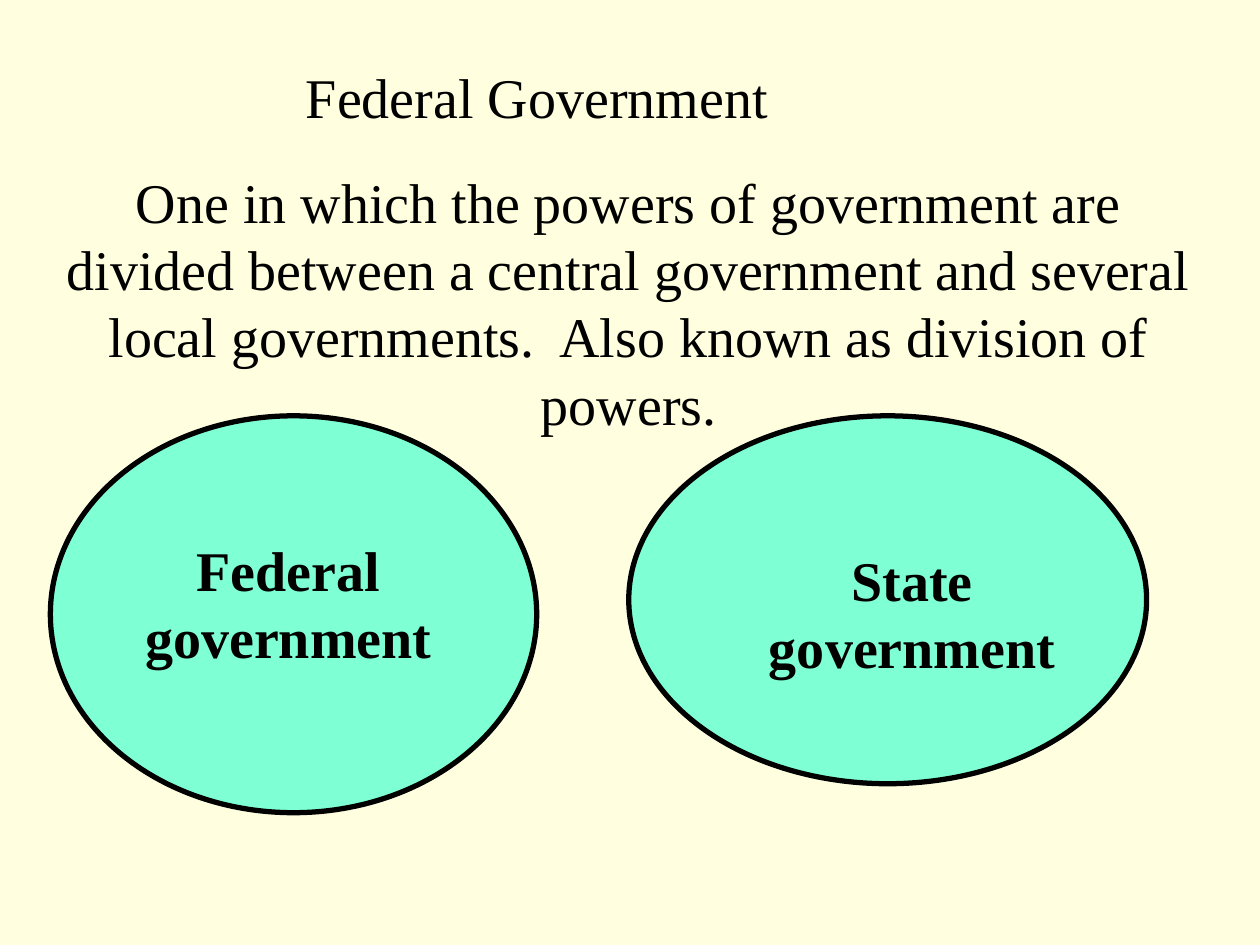
"""Build a slide that defines federal government with two labelled ovals."""
from pptx import Presentation
from pptx import util as u
from pptx.dml.color import RGBColor
from pptx.enum import shapes, text

COLOURS = {"paper": "FFFFE0", "oval": "7FFFD4", "ink": "000000"}
COLUMNS, ROWS = 100, 75


class Page:
    """Holds the style and the current slide."""

    font, size, outline = "Times New Roman", u.Pt(32), u.Pt(3)

    def __init__(self, deck):
        """Add a blank slide with a plain background."""
        self.column = deck.slide_width / COLUMNS
        self.row = deck.slide_height / ROWS
        self.slide = deck.slides.add_slide(deck.slide_layouts[6])
        self.paint(self.slide.background.fill, "paper")

    def paint(self, fill, colour):
        """Give a fill a solid named colour."""
        fill.solid()
        fill.fore_color.rgb = RGBColor.from_string(COLOURS[colour])

    def place(self, left, top, width, height):
        """Turn grid columns and rows into lengths."""
        return (u.Emu(round(left * self.column)), u.Emu(round(top * self.row)),
                u.Emu(round(width * self.column)), u.Emu(round(height * self.row)))

    def oval(self, *cells):
        """Draw an outlined oval."""
        oval = self.slide.shapes.add_shape(shapes.MSO_SHAPE.OVAL, *self.place(*cells))
        oval.shadow.inherit = False
        self.paint(oval.fill, "oval")
        self.paint(oval.line.fill, "ink")
        oval.line.width = self.outline

    def words(self, content, *cells, align=text.PP_ALIGN.CENTER, bold=False):
        """Write one wrapped paragraph."""
        box = self.slide.shapes.add_textbox(*self.place(*cells))
        frame = box.text_frame
        frame.word_wrap = True
        frame.auto_size = text.MSO_AUTO_SIZE.SHAPE_TO_FIT_TEXT
        para = frame.paragraphs[0]
        para.alignment = align
        span = para.add_run()
        span.text = content
        span.font.name, span.font.size, span.font.bold = self.font, self.size, bold
        self.paint(span.font.fill, "ink")


def main():
    """Build and save the deck."""
    deck = Presentation()
    deck.slide_width, deck.slide_height = u.Inches(10), u.Inches(7.5)
    page = Page(deck)
    page.words("Federal Government", 23.3, 4.5, 53.9, 6.3, align=text.PP_ALIGN.LEFT)
    page.words("One in which the powers of government are divided between a central "
               "government and several local governments.  Also known as division of "
               "powers.", 3.2, 12.8, 93.4, 17.1)
    page.oval(4, 33, 38.6, 31.5)
    page.oval(49.9, 33, 41.1, 29.2)
    page.words("Federal government", 8, 42, 29.8, 11.7, bold=True)
    page.words("State government", 56.3, 42.8, 32.2, 11.7, bold=True)
    deck.save("out.pptx")


if __name__ == "__main__":
    main()
